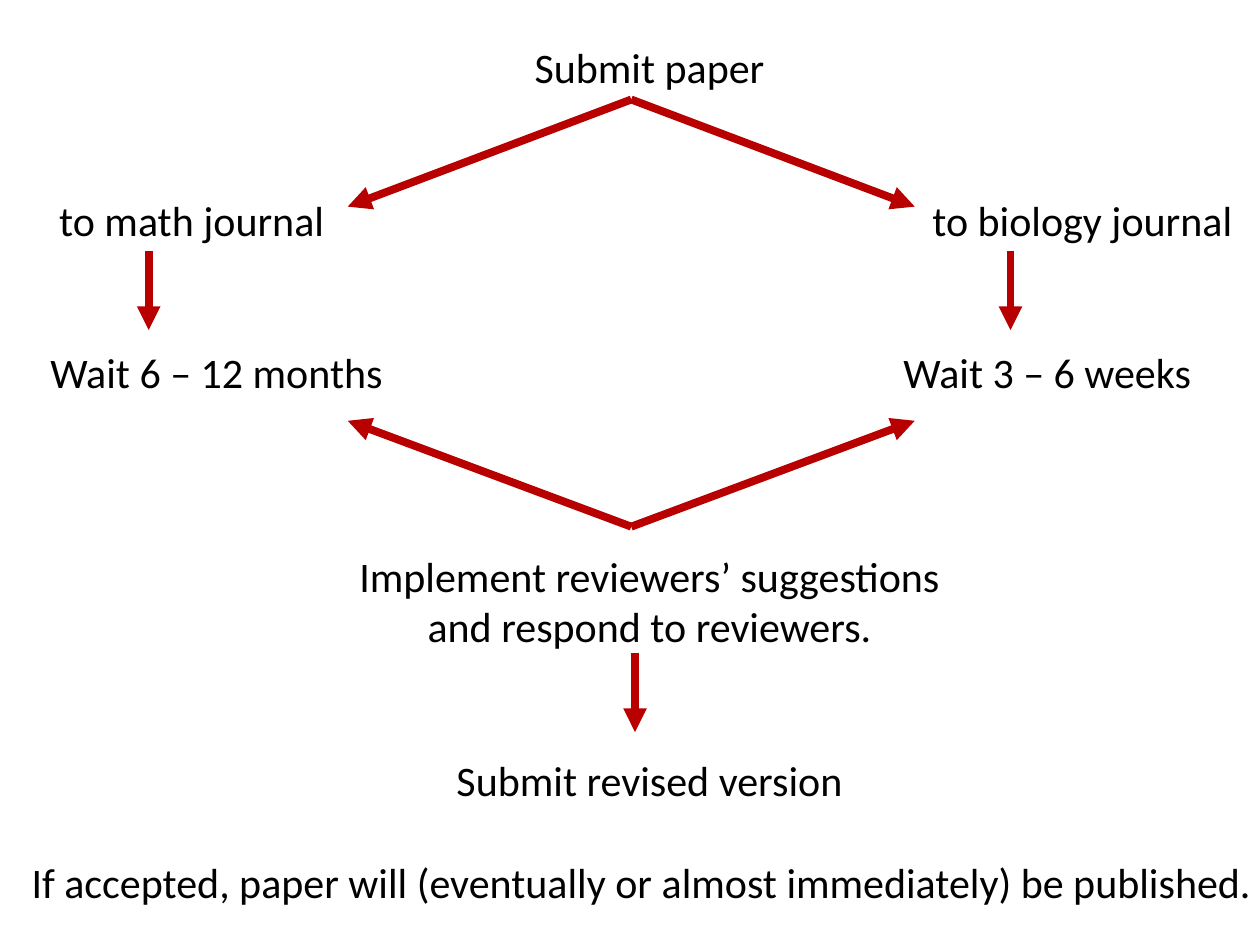
from lxml.etree import SubElement
from pptx import Presentation
from pptx.dml.color import RGBColor
from pptx.enum.shapes import MSO_CONNECTOR
from pptx.enum.text import MSO_ANCHOR, PP_ALIGN
from pptx.oxml.ns import qn
from pptx.util import Inches, Pt

BLACK = RGBColor(0x00, 0x00, 0x00)
RED = RGBColor(0xB9, 0x00, 0x00)

LEFT, RIGHT = PP_ALIGN.LEFT, PP_ALIGN.CENTER
CENTER = PP_ALIGN.CENTER
TEXT_LEFT, TEXT_WIDTH = 0.25, 9.81
TEXT_TOP, ROW_HEIGHT = 0.33, 0.404

STEPS = [
    (0, TEXT_LEFT, TEXT_WIDTH, CENTER, ["Submit paper"]),
    (3, 0.47, 2.5, LEFT, ["to math journal"]),
    (3, 7.4, 2.6, LEFT, ["to biology journal"]),
    (6, 0.4, 3, LEFT, ["Wait 6 – 12 months"]),
    (6, 7.17, 2.6, LEFT, ["Wait 3 – 6 weeks"]),
    (10, TEXT_LEFT, TEXT_WIDTH, CENTER,
     ["Implement reviewers’ suggestions", "and respond to reviewers."]),
    (14, TEXT_LEFT, TEXT_WIDTH, CENTER, ["Submit revised version"]),
    (16, TEXT_LEFT, TEXT_WIDTH, LEFT,
     ["If accepted, paper will (eventually or almost immediately) be published."]),
]

FORK_X, FORK_REACH = 5.01, 2.25
FORKS = [(0.79, 1.64), (4.18, 3.34)]
DROP_LENGTH = 0.63
DROPS = [(1.18, 1.99), (8.02, 1.99), (5.04, 5.18)]
TEXT_FORMAT = {"name": "Calibri", "size": Pt(24)}
FRAME_FORMAT = {
    "word_wrap": True,
    "vertical_anchor": MSO_ANCHOR.TOP,
    "margin_left": 0,
    "margin_right": 0,
    "margin_top": 0,
    "margin_bottom": 0,
}


def set_attributes(target, values):
    """Set each named attribute on the target."""
    for name, value in values.items():
        setattr(target, name, value)


def add_step(slide, row, left, width, alignment, lines):
    """Add the lines of one step, starting at a text row."""
    shape = slide.shapes.add_textbox(
        Inches(left), Inches(TEXT_TOP + row * ROW_HEIGHT),
        Inches(width), Inches(len(lines) * ROW_HEIGHT))
    frame = shape.text_frame
    set_attributes(frame, FRAME_FORMAT)
    frame.text = "\n".join(lines)
    for paragraph in frame.paragraphs:
        paragraph.alignment = alignment
        set_attributes(paragraph.font, TEXT_FORMAT)
        paragraph.font.color.rgb = BLACK


def add_arrow(slide, *ends):
    """Add a red arrow from the first point to the second."""
    connector = slide.shapes.add_connector(
        MSO_CONNECTOR.STRAIGHT, *(Inches(value) for value in ends))
    connector.line.color.rgb = RED
    connector.line.width = Pt(4.5)
    SubElement(connector.line._get_or_add_ln(), qn("a:tailEnd"), type="triangle")
    SubElement(connector._element.spPr, qn("a:effectLst"))


def main():
    """Build the paper submission flow."""
    presentation = Presentation()
    presentation.slide_width, presentation.slide_height = Inches(10), Inches(7.5)
    slide = presentation.slides.add_slide(presentation.slide_layouts[6])
    for step in STEPS:
        add_step(slide, *step)
    for start, end in FORKS:
        for reach in (-FORK_REACH, FORK_REACH):
            add_arrow(slide, FORK_X, start, FORK_X + reach, end)
    for x, top in DROPS:
        add_arrow(slide, x, top, x, top + DROP_LENGTH)
    presentation.save("out.pptx")


if __name__ == "__main__":
    main()
